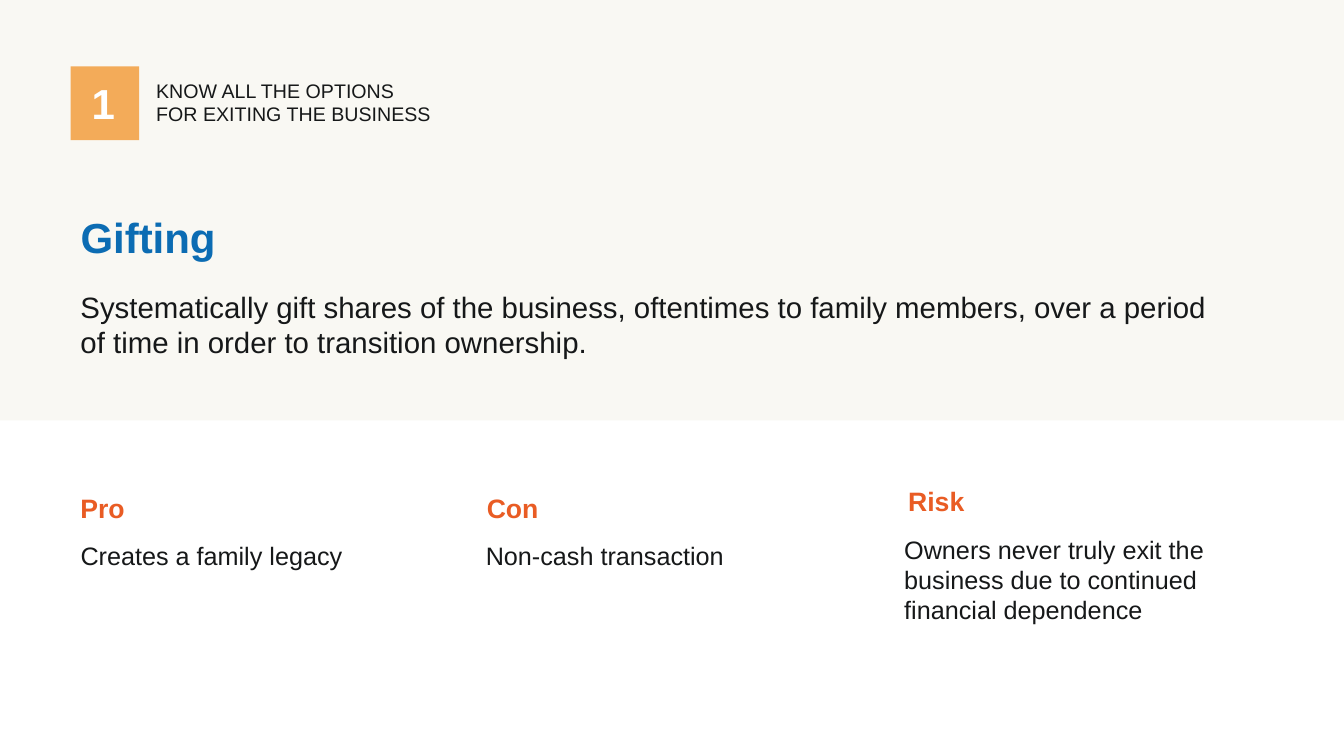
from pptx import Presentation
from pptx.dml.color import RGBColor
from pptx.enum.shapes import MSO_SHAPE
from pptx.enum.text import MSO_AUTO_SIZE
from pptx.util import Inches, Pt

CREAM = RGBColor(0xF9, 0xF8, 0xF3)
WHITE = RGBColor(0xFF, 0xFF, 0xFF)
AMBER = RGBColor(0xF3, 0xAB, 0x59)
ORANGE = RGBColor(0xE9, 0x5C, 0x24)
BLUE = RGBColor(0x0C, 0x6C, 0xB3)
INK = RGBColor(0x16, 0x18, 0x19)

LEFT = 0.7

# heading, its left, top, width, height; then the same for the body
COLUMNS = [
    ("Pro", (LEFT, 4.83, 3.84, 0.42),
     "Creates a family legacy", (LEFT, 5.31, 3.45, 0.4)),
    ("Con", (4.73, 4.83, 3.19, 0.42),
     "Non-cash transaction", (4.72, 5.31, 3.6, 0.4)),
    ("Risk", (8.91, 4.76, 3.84, 0.42),
     "Owners never truly exit the business due to continued financial dependence",
     (8.87, 5.25, 3.26, 1.01)),
]


def add_panel(page, area, color):
    panel = page.shapes.add_shape(MSO_SHAPE.RECTANGLE, *map(Inches, area))
    panel.shadow.inherit = False
    panel.fill.solid()
    panel.fill.fore_color.rgb = color
    panel.line.fill.background()


def add_text(page, area, text, size, color=INK, bold=False):
    box = page.shapes.add_textbox(*map(Inches, area))
    frame = box.text_frame
    frame.word_wrap = True
    frame.auto_size = MSO_AUTO_SIZE.SHAPE_TO_FIT_TEXT
    frame.text = text
    for span in frame.paragraphs[0].runs:
        span.font.name = "Arial"
        span.font.size = Pt(size)
        span.font.bold = bold
        span.font.color.rgb = color


def main():
    deck = Presentation()
    deck.slide_width = Inches(13.33)
    deck.slide_height = Inches(7.5)
    page = deck.slides.add_slide(deck.slide_layouts[6])
    page.background.fill.solid()
    page.background.fill.fore_color.rgb = CREAM

    add_panel(page, (0, 4.17, 13.33, 3.33), WHITE)
    add_panel(page, (LEFT, 0.66, 0.68, 0.73), AMBER)
    add_text(page, (0.81, 0.72, 0.66, 0.61), "1", 30, WHITE, bold=True)
    add_text(page, (1.45, 0.73, 3.51, 0.57),
             "KNOW ALL THE OPTIONS \vFOR EXITING THE BUSINESS", 14)

    add_text(page, (LEFT, 2.05, 9.91, 0.61), "Gifting", 30, BLUE, bold=True)
    add_text(page, (LEFT, 2.82, 11.63, 0.81),
             "Systematically gift shares of the business, oftentimes to family "
             "members, over a period of time in order to transition ownership.", 21)

    for heading, heading_area, body, body_area in COLUMNS:
        add_text(page, heading_area, heading, 19, ORANGE, bold=True)
        add_text(page, body_area, body, 18)

    deck.save("out.pptx")


if __name__ == "__main__":
    main()
